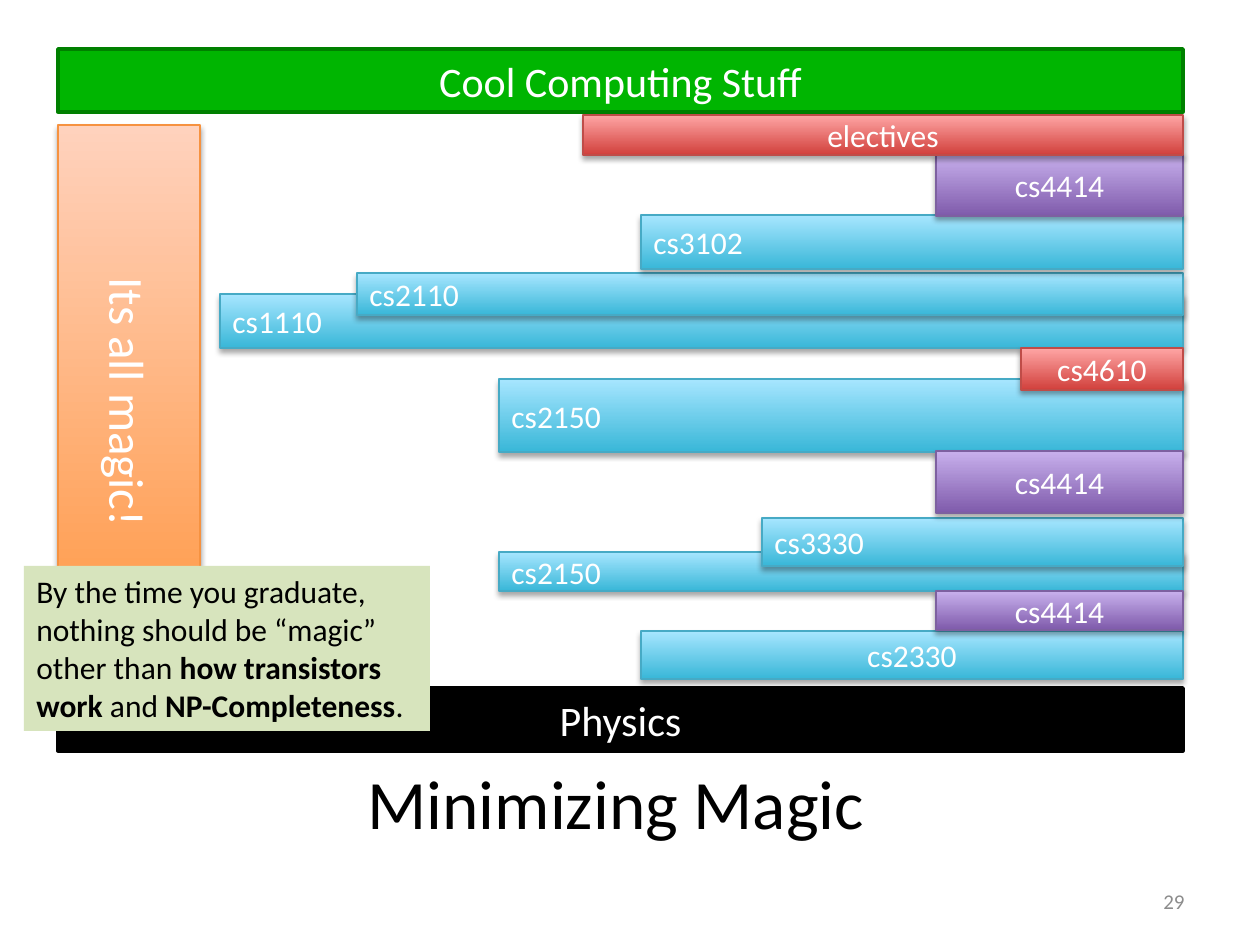
import pptx
import pptx.util
import pptx.dml.color
import pptx.enum.shapes
import pptx.enum.text
import pptx.oxml
import pptx.oxml.ns

PX = 914400 / 126
FONT = "Calibri"
ALIGN = pptx.enum.text.PP_ALIGN
ANCHOR = pptx.enum.text.MSO_ANCHOR
LEFT, RIGHT = 58, 1183  # outer edges of the diagram

# style: (bottom colour, top colour, outline)
BLUE = ("39B7D8", "A7E6FF", "46AAC5")
PURPLE = ("7F5BAB", "C8B0ED", "7D60A0")
RED = ("D1403C", "FFA6A5", "BF4C48")
ORANGE = ("FF953E", "FFD2BD", "F69240")

# course bars, back to front: text, left, top, height, style, alignment
COURSES = [
    ("cs1110", 220, 294, 54, BLUE, ALIGN.LEFT),
    ("cs2110", 357, 273, 42, BLUE, ALIGN.LEFT),
    ("cs2150", 499, 379, 73, BLUE, ALIGN.LEFT),
    ("cs2150", 499, 552, 39, BLUE, ALIGN.LEFT),
    ("cs2330", 641, 631, 48, BLUE, ALIGN.CENTER),
    ("cs3330", 762, 518, 48, BLUE, ALIGN.LEFT),
    ("cs3102", 641, 215, 54, BLUE, ALIGN.LEFT),
    ("cs4414", 936, 451, 62, PURPLE, ALIGN.CENTER),
    ("cs4610", 1021, 348, 42, RED, ALIGN.CENTER),
    ("cs4414", 936, 154, 62, PURPLE, ALIGN.CENTER),
    ("cs4414", 936, 591, 39, PURPLE, ALIGN.CENTER),
    ("electives", 583, 115, 40, RED, ALIGN.CENTER),
]

SHADOW = (
    '<a:outerShdw %s blurRad="39370" dist="22860" dir="5400000" rotWithShape="0">'
    '<a:srgbClr val="000000"><a:alpha val="35000"/></a:srgbClr></a:outerShdw>'
    % pptx.oxml.ns.nsdecls("a")
)


def px(*lengths):
    return [pptx.util.Emu(round(n * PX)) for n in lengths]


def rgb(color):
    return pptx.dml.color.RGBColor.from_string(color)


def write(sp, runs, size, color, align, anchor=ANCHOR.MIDDLE):
    """Fill one paragraph with (text, bold) runs."""
    tf = sp.text_frame
    tf.word_wrap = True
    tf.vertical_anchor = anchor
    p = tf.paragraphs[0]
    p.alignment = align
    for text, bold in runs:
        r = p.add_run()
        r.text = text
        r.font.name = FONT
        r.font.size = pptx.util.Pt(size)
        r.font.bold = bold
        r.font.color.rgb = rgb(color)


def add_rect(s, box):
    sp = s.shapes.add_shape(pptx.enum.shapes.MSO_SHAPE.RECTANGLE, *px(*box))
    sp.shadow.inherit = False
    return sp


def add_outline(sp, color, width):
    sp.line.color.rgb = rgb(color)
    sp.line.width = pptx.util.Pt(width)


def add_gradient_bar(s, box, text, style, align, size=18):
    bottom, top, outline = style
    sp = add_rect(s, box)
    sp.fill.gradient()
    sp.fill.gradient_angle = 90
    for stop, color in zip(sp.fill.gradient_stops, (bottom, top)):
        stop.color.rgb = rgb(color)
    add_outline(sp, outline, 0.75)
    effects = sp._element.spPr.find(pptx.oxml.ns.qn("a:effectLst"))
    effects.append(pptx.oxml.parse_xml(SHADOW))
    write(sp, [(text, False)], size, "FFFFFF", align)
    return sp


def add_flat_box(s, box, runs, size, fill, color, align, outline=None):
    sp = add_rect(s, box)
    sp.fill.solid()
    sp.fill.fore_color.rgb = rgb(fill)
    if outline:
        add_outline(sp, outline, 2)
    else:
        sp.line.fill.background()
    write(sp, runs, size, color, align, ANCHOR.TOP)
    sp.text_frame.auto_size = pptx.enum.text.MSO_AUTO_SIZE.SHAPE_TO_FIT_TEXT


def add_label(s, box, text, size, color, align):
    write(s.shapes.add_textbox(*px(*box)), [(text, False)], size, color, align)


def main():
    prs = pptx.Presentation()
    prs.slide_width, prs.slide_height = px(1260, 945)
    s = prs.slides.add_slide(prs.slide_layouts[6])

    # Title and slide number
    add_label(s, (49, 751, 1134, 102), "Minimizing Magic", 39.6, "000000", ALIGN.CENTER)
    add_label(s, (903, 876, 294, 50), "29", 12, "8C8C8C", ALIGN.RIGHT)

    # Vertical bar on the left
    magic = add_gradient_bar(s, (LEFT, 125, 142, 554), "Its all magic!",
                             ORANGE, ALIGN.CENTER, 28)
    magic.text_frame._txBody.bodyPr.set("vert", "vert")

    # Bottom and top layers
    for text, top, fill, outline in (
        ("Physics", 688, "000000", "000000"),
        ("Cool Computing Stuff", 49, "00B501", "008000"),
    ):
        add_flat_box(s, (LEFT, top, RIGHT - LEFT, 63), [(text, False)], 24,
                     fill, "FFFFFF", ALIGN.CENTER, outline)

    # Courses, all reaching the right edge
    for text, left, top, height, style, align in COURSES:
        add_gradient_bar(s, (left, top, RIGHT - left, height), text, style, align)

    # Note
    note = [
        ("By the time you graduate, nothing should be “magic” other than ", False),
        ("how transistors work ", True),
        ("and ", False),
        ("NP-Completeness", True),
        (".", False),
    ]
    add_flat_box(s, (24, 566, 406, 165), note, 18, "D7E4BD", "000000", ALIGN.LEFT)

    prs.save("out.pptx")


if __name__ == "__main__":
    main()
